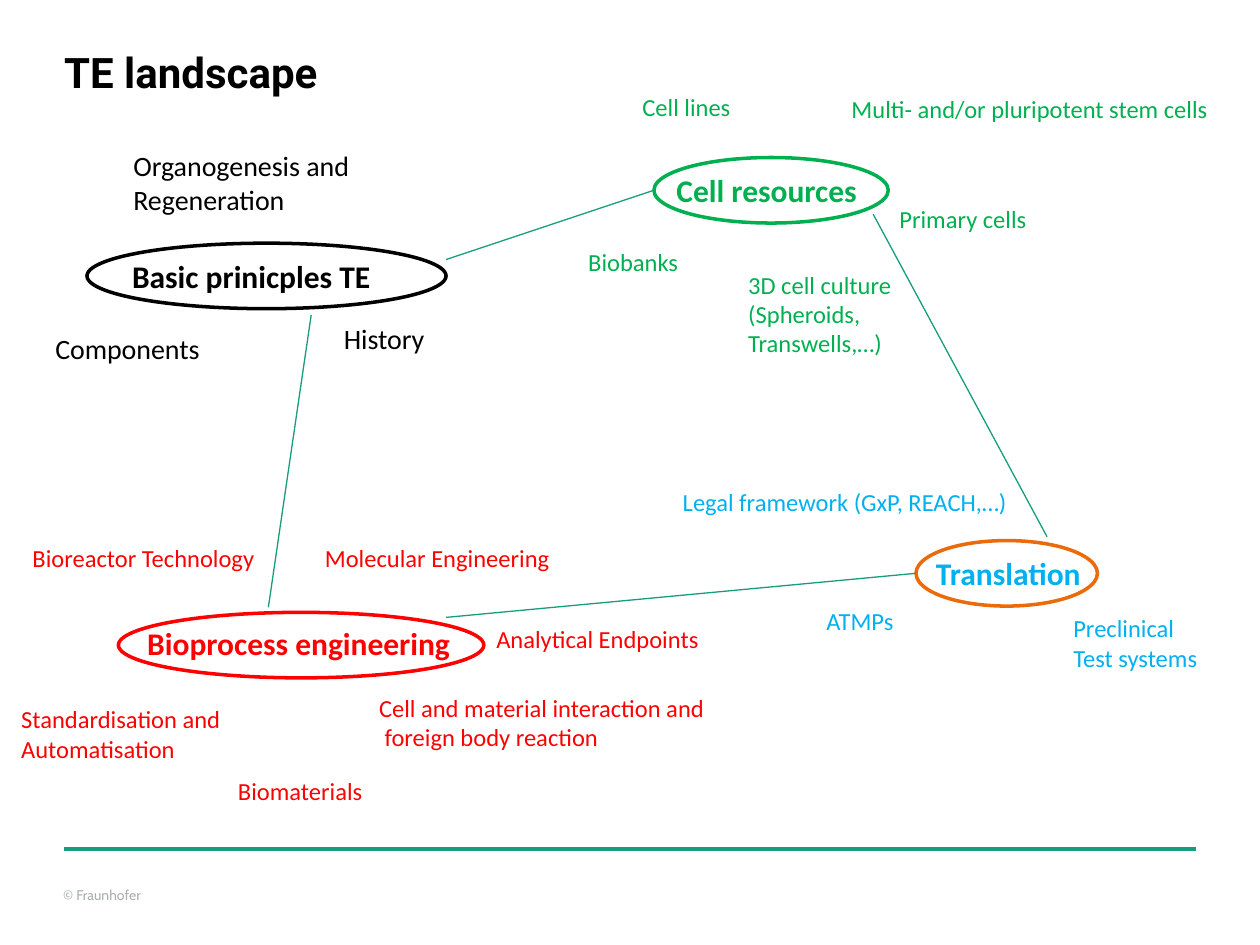
from pptx import Presentation
from pptx import util as u
from pptx.dml.color import RGBColor
from pptx.enum import shapes, text
from pptx.oxml.ns import qn
from lxml import etree

PX = 9144  # EMU per px, 100 px to the inch
BLACK, GREEN, RED, BLUE = "000000", "00B050", "FF0000", "00B0F0"
ORANGE, TEAL, GREY = "EB6A0A", "179C7D", "A8AFAF"

# Topics: ellipse box and line colour, heading box and text, heading colour
TOPICS = [
    ((69, 193, 285, 52), BLACK, (95, 199, 276, 40), "Basic prinicples TE", BLACK),
    ((519, 125, 186, 52), GREEN, (527, 131, 165, 40), "Cell resources", GREEN),
    ((94, 486, 290, 52), RED, (107, 490, 285, 40), "Bioprocess engineering", RED),
    ((727, 429, 144, 52), ORANGE, (733, 435, 165, 40), "Translation", BLUE),
]

# Keywords by colour and size; \v is a line break, \n a new paragraph
WORDS = {
    (BLACK, 16): [
        ((96, 113, 305, 64), "Organogenesis and\vRegeneration"),
        ((34, 258, 305, 37), "Components"),
        ((263, 250, 305, 37), "History"),
    ],
    (GREEN, 14): [
        ((500, 68, 136, 34), "Cell lines"),
        ((666, 70, 307, 34), "Multi- and/or pluripotent stem cells"),
        ((704, 157, 153, 34), "Primary cells"),
        ((457, 191, 153, 34), "Biobanks"),
        ((584, 209, 174, 81), "3D cell culture\v(Spheroids,\vTranswells,…)"),
    ],
    (RED, 14): [
        ((16, 426, 197, 34), "Bioreactor Technology"),
        ((248, 426, 221, 34), "Molecular Engineering"),
        ((384, 490, 221, 34), "Analytical Endpoints"),
        ((291, 545, 281, 57), "Cell and material interaction and\v foreign body reaction"),
        ((7, 554, 240, 57), "Standardisation and\vAutomatisation"),
        ((179, 611, 221, 34), "Biomaterials"),
    ],
    (BLUE, 14): [
        ((532, 382, 282, 34), "Legal framework (GxP, REACH,…)"),
        ((646, 476, 240, 34), "ATMPs"),
        ((842, 482, 152, 57), "Preclinical\nTest systems"),
    ],
}

LINKS = [
    (354, 206, 519, 151),
    (247, 250, 213, 482),
    (354, 490, 727, 455),
    (693, 170, 831, 426),
]


def emu(nums):
    return [n * PX for n in nums]


def rgb(code):
    return RGBColor.from_string(code)


def write(shape, words, size, color, face="Calibri", bold=False, inset=True):
    frame = shape.text_frame
    frame.word_wrap = True
    frame.vertical_anchor = text.MSO_ANCHOR.TOP
    if not inset:
        frame.margin_left = frame.margin_right = 0
        frame.margin_top = frame.margin_bottom = 0
    frame.text = words
    for para in frame.paragraphs:
        para.alignment = text.PP_ALIGN.LEFT
        font = para.font
        font.name, font.size, font.bold = face, u.Pt(size), bold
        font.color.rgb = rgb(color)


def label(slide, box, words, size, color, **style):
    write(slide.shapes.add_textbox(*emu(box)), words, size, color, **style)


def ring(slide, box, color):
    oval = slide.shapes.add_shape(shapes.MSO_SHAPE.OVAL, *emu(box))
    oval.shadow.inherit = False
    oval.fill.background()
    oval.line.color.rgb = rgb(color)
    oval.line.width = u.Pt(2)


def link(slide, ends, width):
    line = slide.shapes.add_connector(shapes.MSO_CONNECTOR.STRAIGHT, *emu(ends))
    line.line.color.rgb = rgb(TEAL)
    line.line.width = u.Pt(width)
    etree.SubElement(line._element.spPr, qn("a:effectLst"))


def title(slide, box, words):
    head = slide.shapes.title
    head.left, head.top, head.width, head.height = emu(box)
    write(head, words, 24, BLACK, face="Roboto", bold=True, inset=False)


def main():
    deck = Presentation()
    deck.slide_width, deck.slide_height = emu((1000, 750))
    slide = deck.slides.add_slide(deck.slide_layouts[5])

    # Footer and title
    label(slide, (50, 704, 98, 13), "© Fraunhofer", 8, GREY, face="Cabin", inset=False)
    link(slide, (51, 674, 949, 674), 2.5)
    title(slide, (51, 37, 898, 134), "TE landscape")

    # Topics with their keywords
    for oval, edge, box, words, color in TOPICS:
        ring(slide, oval, edge)
        label(slide, box, words, 18, color, bold=True)
    for (color, size), items in WORDS.items():
        for box, words in items:
            label(slide, box, words, size, color)

    # Links between topics
    for ends in LINKS:
        link(slide, ends, 0.75)

    deck.save("out.pptx")


if __name__ == "__main__":
    main()
